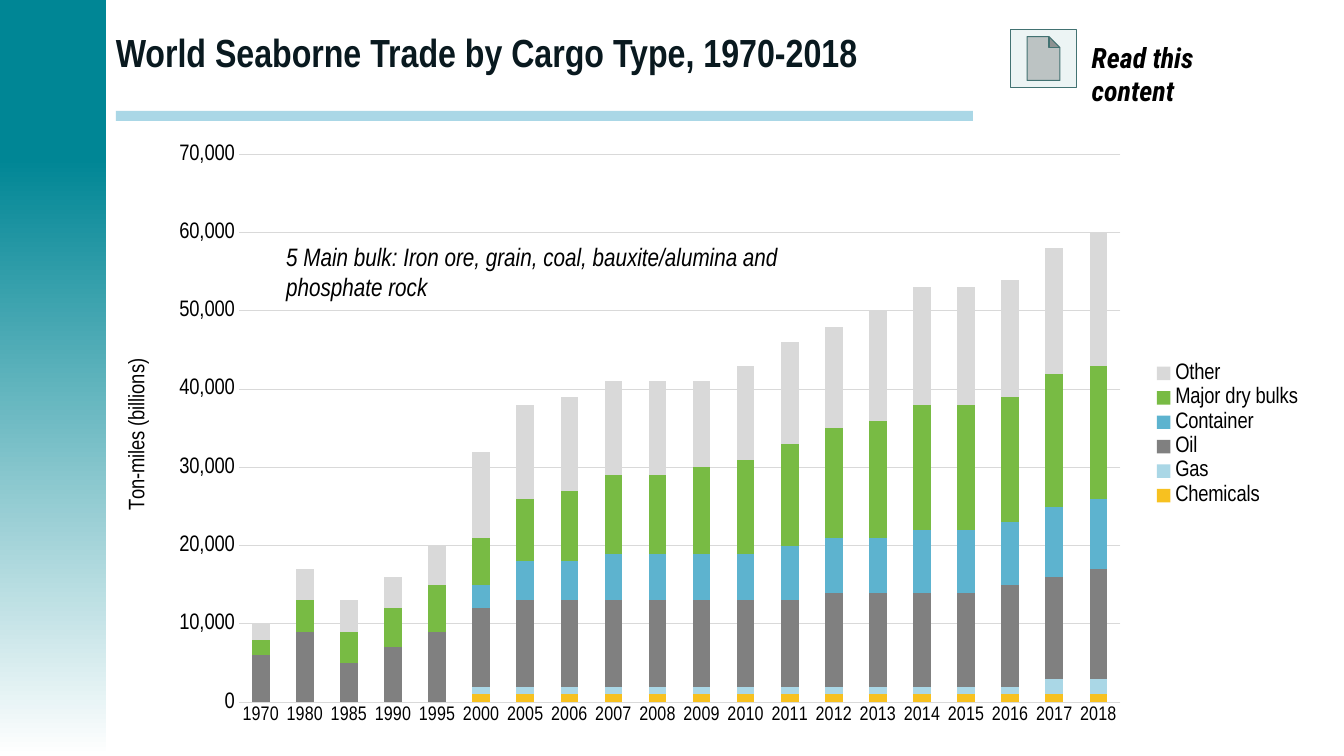
from dataclasses import dataclass

from lxml import etree
from pptx import Presentation
from pptx.chart.data import CategoryChartData
from pptx.dml.color import RGBColor
from pptx.enum import chart as ch, shapes, text
from pptx.oxml import ns
from pptx.util import Inches, Pt


@dataclass(frozen=True)
class Theme:
    """Colours, fonts and type sizes of the slide."""
    teal: str = "008695"
    white: str = "FFFFFF"
    pale_blue: str = "AAD7E6"
    ink: str = "09191F"
    black: str = "000000"
    grid: str = "D9D9D9"
    button: str = "ECF4F4"
    button_line: str = "427272"
    font: str = "Arial Narrow"
    link_font: str = "Roboto Condensed"
    title_size: int = 28
    link_size: int = 20
    note_size: int = 18
    chart_size: int = 16
    year_size: int = 14


THEME = Theme()
YEARS = [1970, 1980, 1985, 1990, 1995, *range(2000, 2001), *range(2005, 2019)]
UNRECORDED = [None] * 5
THOUSANDS = {
    "Chemicals": ("F7C120", UNRECORDED + [1] * 15),
    "Gas": (THEME.pale_blue, UNRECORDED + [1] * 13 + [2] * 2),
    "Oil": ("808080", [6, 9, 5, 7, 9, 10, 11, 11, 11, 11, 11, 11, 11, 12, 12, 12, 12, 13, 13, 14]),
    "Container": ("5DB3CF", UNRECORDED + [3, 5, 5, 6, 6, 6, 6, 7, 7, 7, 8, 8, 8, 9, 9]),
    "Major dry bulks": ("78BB44", [2, 4, 4, 5, 6, 6, 8, 9, 10, 10, 11, 12, 13, 14, 15, 16, 16, 16, 17, 17]),
    "Other": (THEME.grid, [2, 4, 4, 4, 5, 11, 12, 12, 12, 12, 11, 12, 13, 13, 14, 15, 15, 15, 16, 17]),
}


def rgb(colour):
    """Return a colour object for a hex string."""
    return RGBColor.from_string(colour)


def style_font(font, size, colour=THEME.black, face=THEME.font, bold=False, italic=False):
    """Set all visible properties of a font."""
    font.name, font.size, font.bold, font.italic = face, Pt(size), bold, italic
    font.color.rgb = rgb(colour)


def add_block(slide, left, top, width, height, colour, kind=shapes.MSO_SHAPE.RECTANGLE):
    """Add a plain filled shape without outline."""
    block = slide.shapes.add_shape(kind, Inches(left), Inches(top), Inches(width), Inches(height))
    block.shadow.inherit = False
    block.fill.solid()
    block.fill.fore_color.rgb = rgb(colour)
    block.line.fill.background()
    return block


def add_words(slide, left, top, width, height, words, size, anchor=text.MSO_ANCHOR.TOP, **style):
    """Add a wrapped text box with one styled paragraph."""
    box = slide.shapes.add_textbox(Inches(left), Inches(top), Inches(width), Inches(height))
    frame = box.text_frame
    frame.word_wrap = True
    frame.vertical_anchor = anchor
    frame.text = words
    style_font(frame.paragraphs[0].runs[0].font, size, **style)


def add_side_band(slide, left, top, width, height):
    """Add the teal band that fades to white below its solid top."""
    solid = 1.58
    add_block(slide, left, top, width, solid, THEME.teal)
    fade = add_block(slide, left, top + solid, width, height - solid, THEME.teal)
    fade.fill.gradient()
    fade.fill.gradient_angle = 270
    for stop, colour, position in zip(fade.fill.gradient_stops, (THEME.teal, THEME.white), (0, 1)):
        stop.color.rgb = rgb(colour)
        stop.position = position


def add_heading(slide, left, top, width, height):
    """Add the slide title and the rule below it."""
    add_words(slide, left, top, width, height, "World Seaborne Trade by Cargo Type, 1970-2018",
              THEME.title_size, text.MSO_ANCHOR.MIDDLE, colour=THEME.ink, bold=True)
    add_block(slide, left + 0.1, top + 1.09, 8.5, 0.1, THEME.pale_blue)


def add_reading_link(slide, left, top):
    """Add the document button with its label."""
    button = add_block(slide, left, top, 0.66, 0.58, THEME.button,
                       shapes.MSO_SHAPE.ACTION_BUTTON_DOCUMENT)
    button.line.color.rgb = rgb(THEME.button_line)
    button.line.width = Pt(0.75)
    add_words(slide, left + 0.71, top + 0.06, 1.86, 0.44, "Read this content",
              THEME.link_size, face=THEME.link_font, bold=True, italic=True)


def place_plot(chart, **fractions):
    """Fix the inner plot area at fractions of the chart frame."""
    plot_area = chart.plots[0]._element.getparent()
    layout = plot_area.find(ns.qn("c:layout"))
    if layout is None:
        layout = etree.Element(ns.qn("c:layout"))
        plot_area.insert(0, layout)
    manual = etree.SubElement(layout, ns.qn("c:manualLayout"))
    settings = {"layoutTarget": "inner", "xMode": "edge", "yMode": "edge", **fractions}
    for tag, value in settings.items():
        etree.SubElement(manual, ns.qn(f"c:{tag}")).set("val", str(value))


def style_axes(chart):
    """Format the year axis and the ton-mile axis."""
    years, ton_miles = chart.category_axis, chart.value_axis
    for axis, size in ((years, THEME.year_size), (ton_miles, THEME.chart_size)):
        axis.major_tick_mark = axis.minor_tick_mark = ch.XL_TICK_MARK.NONE
        style_font(axis.tick_labels.font, size)
    ton_miles.minimum_scale, ton_miles.maximum_scale, ton_miles.major_unit = 0, 70000, 10000
    ton_miles.tick_labels.number_format = "#,##0"
    ton_miles.tick_labels.number_format_is_linked = False
    ton_miles.format.line.fill.background()
    for line in (years.format.line, ton_miles.major_gridlines.format.line):
        line.color.rgb = rgb(THEME.grid)
        line.width = Pt(0.75)
    caption = ton_miles.axis_title.text_frame
    caption.text = "Ton-miles (billions)"
    style_font(caption.paragraphs[0].runs[0].font, THEME.chart_size)


def add_trade_chart(slide, left, top, width, height):
    """Add the stacked columns of trade by cargo type and their note."""
    trade = CategoryChartData(number_format="#,##0")
    trade.categories = [str(year) for year in YEARS]
    for cargo, (_, values) in THOUSANDS.items():
        trade.add_series(cargo, [value and value * 1000 for value in values])
    chart = slide.shapes.add_chart(ch.XL_CHART_TYPE.COLUMN_STACKED, Inches(left), Inches(top),
                                   Inches(width), Inches(height), trade).chart
    style_font(chart.font, THEME.chart_size)
    chart.has_title = False
    columns = chart.plots[0]
    columns.gap_width, columns.overlap, columns.vary_by_categories = 150, 100, False
    for series, (colour, _) in zip(columns.series, THOUSANDS.values()):
        series.format.fill.solid()
        series.format.fill.fore_color.rgb = rgb(colour)
    style_axes(chart)
    chart.has_legend = True
    chart.legend.position = ch.XL_LEGEND_POSITION.RIGHT
    chart.legend.include_in_layout = False
    style_font(chart.legend.font, THEME.chart_size)
    place_plot(chart, x=0.11, y=0.04, w=0.73, h=0.9)
    add_words(slide, left + 1.69, top + 1.05, 5.42, 0.71,
              "5 Main bulk: Iron ore, grain, coal, bauxite/alumina and phosphate rock",
              THEME.note_size, italic=True)


def main():
    """Build and save the slide."""
    deck = Presentation()
    deck.slide_width, deck.slide_height = Inches(13.33), Inches(7.5)
    slide = deck.slides.add_slide(deck.slide_layouts[6])
    add_side_band(slide, -0.02, -0.01, 1.07, 7.51)
    add_heading(slide, 1.05, 0.01, 8.9, 1)
    add_trade_chart(slide, 1.05, 1.29, 11.98, 6.04)
    add_reading_link(slide, 10.02, 0.29)
    deck.save("out.pptx")


if __name__ == "__main__":
    main()
